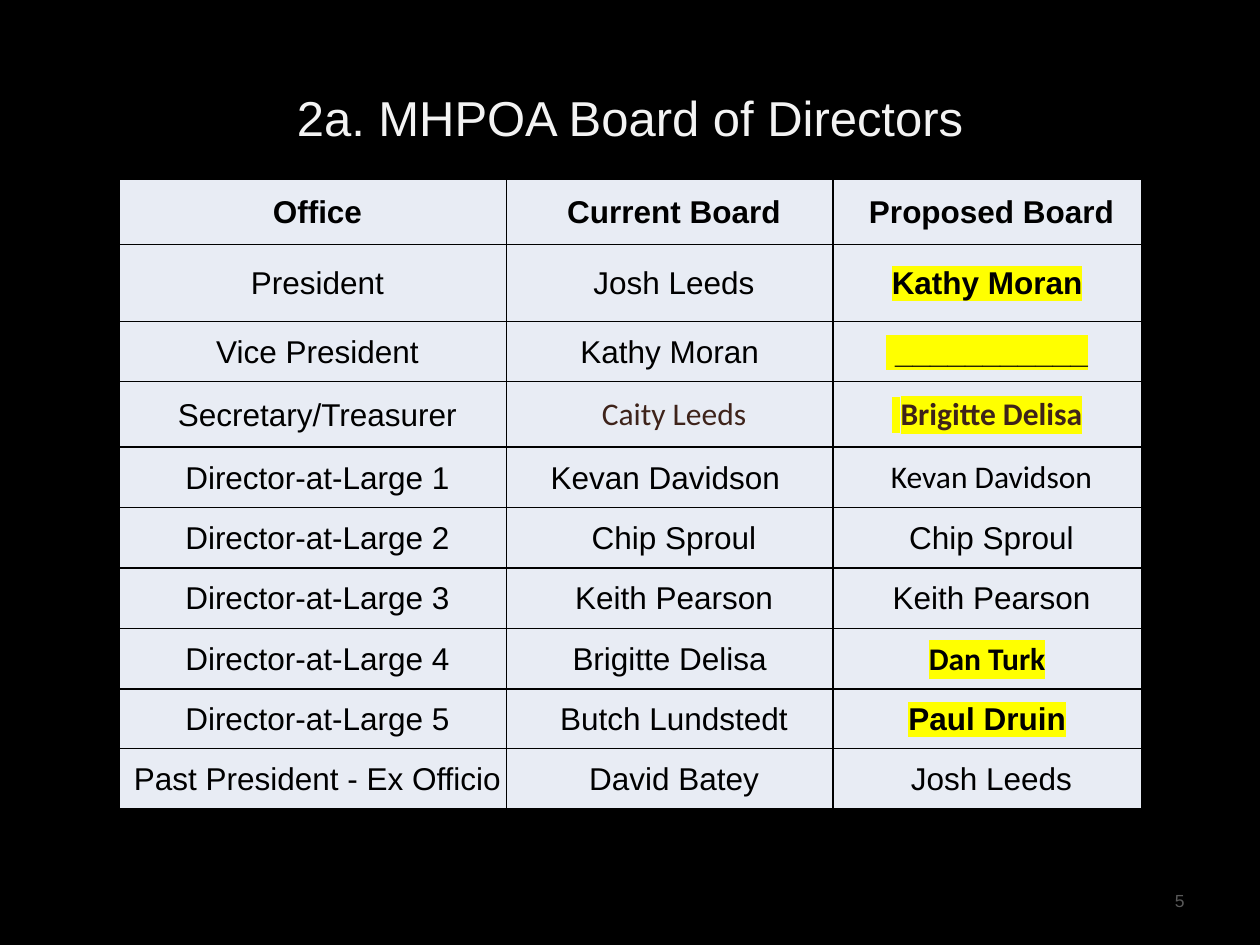
from lxml import etree
from pptx import Presentation
from pptx.dml.color import RGBColor
from pptx.enum.text import MSO_ANCHOR, PP_ALIGN
from pptx.oxml.ns import qn
from pptx.util import Inches, Pt

MID = MSO_ANCHOR.MIDDLE
CENTER, RIGHT = PP_ALIGN.CENTER, PP_ALIGN.RIGHT
UNIT = 0.5  # inches per grid step: 20 columns by 15 rows

BASE = {"name": "Arial", "size": Pt(18), "bold": False, "color": "000000"}
BOLD = {"bold": True}
MARK = {"bold": True, "high": "FFFF00"}
CAL = {"name": "Calibri"}
BROWN = {"name": "Calibri", "color": "3E231A"}

COLS = [6.14, 5.18, 4.9]
ROWS = [1.04, 1.22, 0.96, 1.04, 0.96, 0.96, 0.96, 0.96, 0.94, 0.96]

# A cell is plain text or a list of (text, format) runs.
BOARD = [
    [[(" Office", BOLD)], [(" Current Board", BOLD)], [(" Proposed Board", BOLD)]],
    [" President", " Josh Leeds", [("Kathy Moran", MARK)]],
    [" Vice President", "Kathy Moran", [(" ___________", MARK)]],
    [" Secretary/Treasurer", [(" ", {}), ("Caity Leeds", BROWN)],
     [(" ", MARK), ("Brigitte Delisa", MARK | BROWN)]],
    [" Director-at-Large 1", "Kevan Davidson ", [(" ", {}), ("Kevan Davidson", CAL)]],
    [" Director-at-Large 2", " Chip Sproul", " Chip Sproul"],
    [" Director-at-Large 3", " Keith Pearson", " Keith Pearson"],
    [" Director-at-Large 4", "Brigitte Delisa", [("Dan Turk", MARK | CAL)]],
    [" Director-at-Large 5", " Butch Lundstedt", [("Paul Druin", MARK)]],
    [" Past President - Ex Officio", " David Batey", " Josh Leeds"],
]


def rgb(text):
    return RGBColor.from_string(text)


def grid(*steps):
    return [Inches(step * UNIT) for step in steps]


def paint(fill, color):
    fill.solid()
    fill.fore_color.rgb = rgb(color)


def assign(item, values):
    for key, value in values.items():
        setattr(item, key, value)


class Deck:
    """Holds the text style and the current slide."""

    def __init__(self, style, back):
        self.style = style
        self.file = Presentation()
        self.file.slide_width, self.file.slide_height = grid(20, 15)
        self.slide = self.file.slides.add_slide(self.file.slide_layouts[5])
        paint(self.slide.background.fill, back)

    def fill_text(self, frame, runs, align):
        para = frame.paragraphs[0]
        para.alignment = align
        for text, form in runs:
            run = para.add_run()
            run.text = text
            look = self.style | form
            color, high = look.pop("color"), look.pop("high", None)
            assign(run.font, look)
            run.font.color.rgb = rgb(color)
            if high:
                mark = etree.Element(qn("a:highlight"))
                etree.SubElement(mark, qn("a:srgbClr"), val=high)
                run._r.get_or_add_rPr().find(qn("a:solidFill")).addnext(mark)

    def fit(self, shape, at, runs, align):
        assign(shape, dict(zip(("left", "top", "width", "height"), grid(*at))))
        assign(shape.text_frame, {"word_wrap": True, "vertical_anchor": MID})
        self.fill_text(shape.text_frame, runs, align)

    def title(self, at, text, form):
        self.fit(self.slide.shapes.title, at, [(text, form)], CENTER)

    def label(self, at, text, form):
        box = self.slide.shapes.add_textbox(*grid(*at))
        self.fit(box, at, [(text, form)], RIGHT)

    def edge(self, cell, color, width):
        props = cell._tc.get_or_add_tcPr()
        for spot, side in enumerate("LRTB"):
            line = etree.Element(qn(f"a:ln{side}"), w=str(Pt(width)))
            fill = etree.SubElement(line, qn("a:solidFill"))
            etree.SubElement(fill, qn("a:srgbClr"), val=color)
            props.insert(spot, line)

    def table(self, left, top, cols, rows, data, fill):
        at = grid(left, top, sum(cols), sum(rows))
        table = self.slide.shapes.add_table(len(rows), len(cols), *at).table
        assign(table, {"first_row": False, "horz_banding": False})
        for col, width in zip(table.columns, grid(*cols)):
            col.width = width
        for row, height, line in zip(table.rows, grid(*rows), data):
            row.height = height
            for cell, runs in zip(row.cells, line):
                assign(cell, {"vertical_anchor": MID, "margin_left": Inches(0.01),
                              "margin_right": Inches(0.01),
                              "margin_top": Inches(0.01), "margin_bottom": 0})
                paint(cell.fill, fill)
                self.edge(cell, "000000", 1)
                if isinstance(runs, str):
                    runs = [(runs, {})]
                self.fill_text(cell.text_frame, runs, CENTER)


def main():
    deck = Deck(BASE, "000000")
    deck.title((1, 0.6, 18, 2.5), "2a. MHPOA Board of Directors",
               {"size": Pt(28), "color": "F3F3F3"})
    deck.table(1.9, 2.84, COLS, ROWS, BOARD, "E8ECF4")
    deck.label((14.34, 13.9, 4.66, 0.8), "5", {"size": Pt(10), "color": "595959"})
    deck.file.save("out.pptx")


if __name__ == "__main__":
    main()
